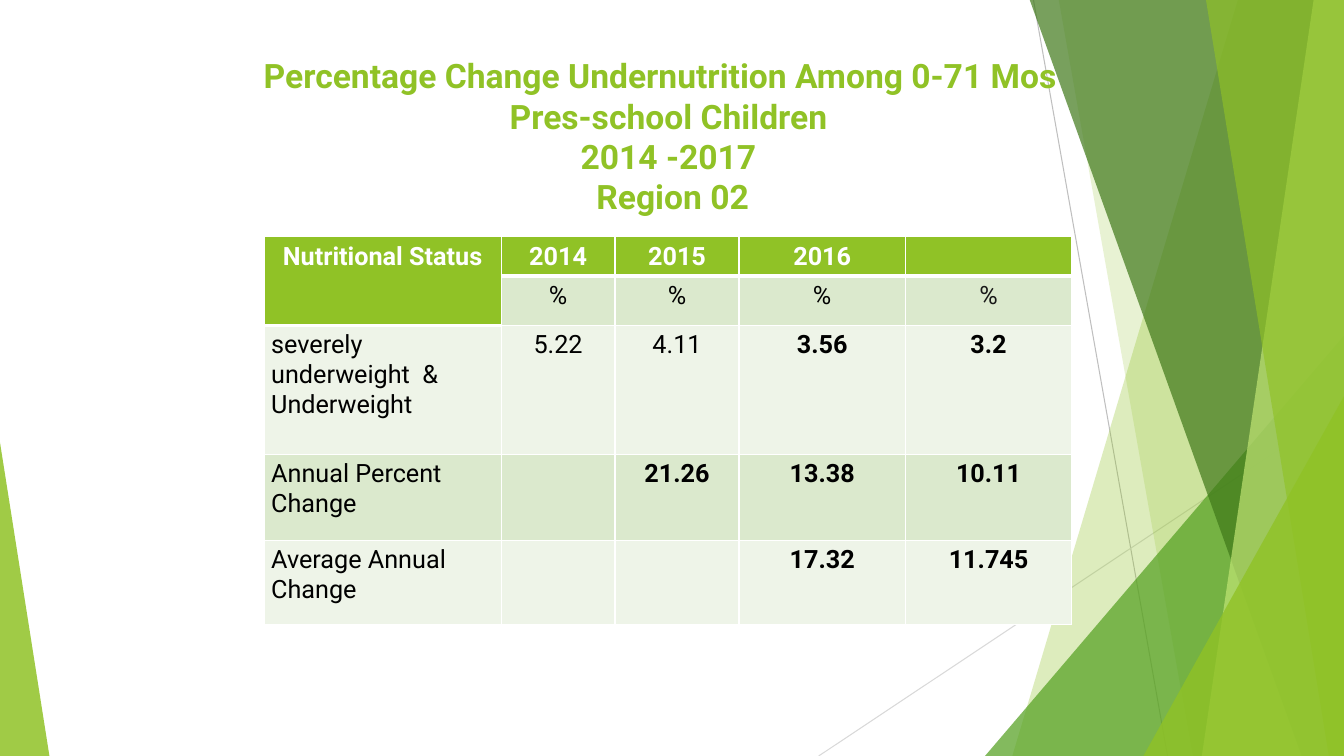
from lxml import etree
from pptx import Presentation
from pptx.dml.color import RGBColor
from pptx.enum.shapes import MSO_CONNECTOR, MSO_SHAPE
from pptx.enum.text import MSO_ANCHOR, PP_ALIGN
from pptx.oxml.ns import qn
from pptx.util import Inches, Pt

FONT = "Roboto"
COLORS = {
    "lime": "90C226", "green": "54A021", "forest": "3F7819", "pale": "C0E474",
    "band_dark": "DBE9CD", "band_light": "EEF4E8", "white": "FFFFFF",
    "black": "000000", "charcoal": "181818", "gray": "BFBFBF", "silver": "D9D9D9",
}

# Table content: None marks an empty cell
COLUMN_WIDTHS = [2.35, 1.13, 1.23, 1.65, 1.65]
ROW_HEIGHTS = [0.39, 0.49, 1.28, 0.85, 0.84]
ROW_FILLS = ["lime", "band_dark", "band_light", "band_dark", "band_light"]
ROWS = [
    ["Nutritional Status", "2014", "2015", "2016", None],
    [None, "%", "%", "%", "%"],
    ["severely underweight  &\nUnderweight", "5.22", "4.11", "3.56", "3.2"],
    ["Annual Percent Change", None, "21.26", "13.38", "10.11"],
    ["Average Annual Change", None, None, "17.32", "11.745"],
]
BOLD_VALUES = {"3.56", "3.2", "21.26", "13.38", "10.11", "17.32", "11.745"}
TITLE_LINES = ["Percentage Change Undernutrition Among 0-71 Mos  ",
               "Pres-school Children", "2014 -2017", " Region 02"]


def rgb(name):
    return RGBColor.from_string(COLORS[name])


def paint(shape, color, opacity):
    """Give a shape a translucent fill without line or shadow."""
    shape.shadow.inherit = False
    shape.line.fill.background()
    shape.fill.solid()
    shape.fill.fore_color.rgb = rgb(color)
    color_element = shape._element.spPr.find(qn("a:solidFill"))[0]
    alpha = etree.SubElement(color_element, qn("a:alpha"))
    alpha.set("val", str(opacity * 1000))


def add_thin_line(slide, start, end, color):
    line = slide.shapes.add_connector(
        MSO_CONNECTOR.STRAIGHT, *[Inches(value) for value in start + end])
    line.line.color.rgb = rgb(color)
    line.line.width = Pt(0.75)
    etree.SubElement(line._element.spPr, qn("a:effectLst"))


def add_right_band(slide, top_x, bottom_x, color, opacity):
    """Fill the area between a slanted edge and the right slide edge."""
    corners = [(13.33, -0.01), (13.33, 7.5), (bottom_x, 7.5)]
    builder = slide.shapes.build_freeform(Inches(top_x), Inches(-0.01))
    builder.add_line_segments([(Inches(x), Inches(y)) for x, y in corners])
    paint(builder.convert_to_shape(), color, opacity)


def add_corner(slide, box, peak, color, opacity):
    triangle = slide.shapes.add_shape(
        MSO_SHAPE.ISOSCELES_TRIANGLE, *[Inches(value) for value in box])
    triangle.adjustments[0] = peak
    paint(triangle, color, opacity)


def add_text(paragraph, text, size, color, bold):
    run = paragraph.add_run()
    run.text = text
    run.font.name = FONT
    run.font.size = Pt(size)
    run.font.bold = bold
    run.font.color.rgb = rgb(color)


def add_title(slide):
    box = slide.shapes.add_textbox(Inches(1.92), Inches(0.5), Inches(9.42), Inches(1.25))
    frame = box.text_frame
    frame.word_wrap = True
    frame.vertical_anchor = MSO_ANCHOR.TOP
    paragraph = frame.paragraphs[0]
    paragraph.alignment = PP_ALIGN.CENTER
    for index, line in enumerate(TITLE_LINES):
        if index:
            paragraph.add_line_break()
        add_text(paragraph, line, 24, "lime", True)


def bottom_width(row, column):
    """Thick rule under the header cells, thin rules elsewhere."""
    return 3 if row == 0 or (row, column) == (1, 0) else 1


def set_borders(cell, row, column):
    top = bottom_width(row - 1, column) if row else 1
    widths = {"lnL": 1, "lnR": 1, "lnT": top, "lnB": bottom_width(row, column)}
    properties = cell._tc.get_or_add_tcPr()
    for side, width in widths.items():
        border = etree.SubElement(properties, qn(f"a:{side}"), w=str(Pt(width)))
        fill = etree.SubElement(border, qn("a:solidFill"))
        etree.SubElement(fill, qn("a:srgbClr"), val=COLORS["white"])


def fill_cell(cell, row, column):
    is_header = row == 0 or (row, column) == (1, 0)
    set_borders(cell, row, column)
    cell.fill.solid()
    cell.fill.fore_color.rgb = rgb("lime" if is_header else ROW_FILLS[row])
    cell.margin_left = cell.margin_right = Inches(0.07)
    cell.margin_top, cell.margin_bottom = Inches(0.05), Inches(0.03)
    text = ROWS[row][column]
    if text is None:
        return
    color = "white" if is_header else "charcoal" if (row, column) == (1, 4) else "black"
    for index, line in enumerate(text.split("\n")):
        frame = cell.text_frame
        paragraph = frame.add_paragraph() if index else frame.paragraphs[0]
        if is_header or column:
            paragraph.alignment = PP_ALIGN.CENTER
        add_text(paragraph, line, 18, color, is_header or text in BOLD_VALUES)


def add_status_table(slide):
    frame = slide.shapes.add_table(
        len(ROWS), len(COLUMN_WIDTHS), Inches(2.62), Inches(2.35),
        Inches(sum(COLUMN_WIDTHS)), Inches(sum(ROW_HEIGHTS)))
    table = frame.table
    for column, width in zip(table.columns, COLUMN_WIDTHS):
        column.width = Inches(width)
    for row, height in zip(table.rows, ROW_HEIGHTS):
        row.height = Inches(height)
    for row in range(len(ROWS)):
        for column in range(len(COLUMN_WIDTHS)):
            fill_cell(table.cell(row, column), row, column)
    table.cell(0, 0).merge(table.cell(1, 0))


def add_backdrop(slide):
    add_thin_line(slide, (10.25, 0), (11.58, 7.5), "gray")
    add_thin_line(slide, (13.33, 4.03), (8.12, 7.5), "silver")
    add_right_band(slide, 12.28, 10.04, "lime", 30)
    add_right_band(slide, 10.5, 11.83, "lime", 20)
    add_corner(slide, (9.77, 3.33, 3.56, 4.17), 1, "green", 72)
    add_right_band(slide, 10.21, 12.91, "forest", 70)
    add_right_band(slide, 13.03, 11.92, "pale", 70)
    add_right_band(slide, 11.96, 13.18, "lime", 65)
    add_corner(slide, (11.34, 3.93, 1.99, 3.57), 1, "lime", 80)
    add_corner(slide, (0, 4.39, 0.49, 3.11), 0, "lime", 85)


def main():
    presentation = Presentation()
    presentation.slide_width = Inches(13.33)
    presentation.slide_height = Inches(7.5)
    slide = presentation.slides.add_slide(presentation.slide_layouts[6])
    add_backdrop(slide)
    add_title(slide)
    add_status_table(slide)
    presentation.save("out.pptx")


if __name__ == "__main__":
    main()
